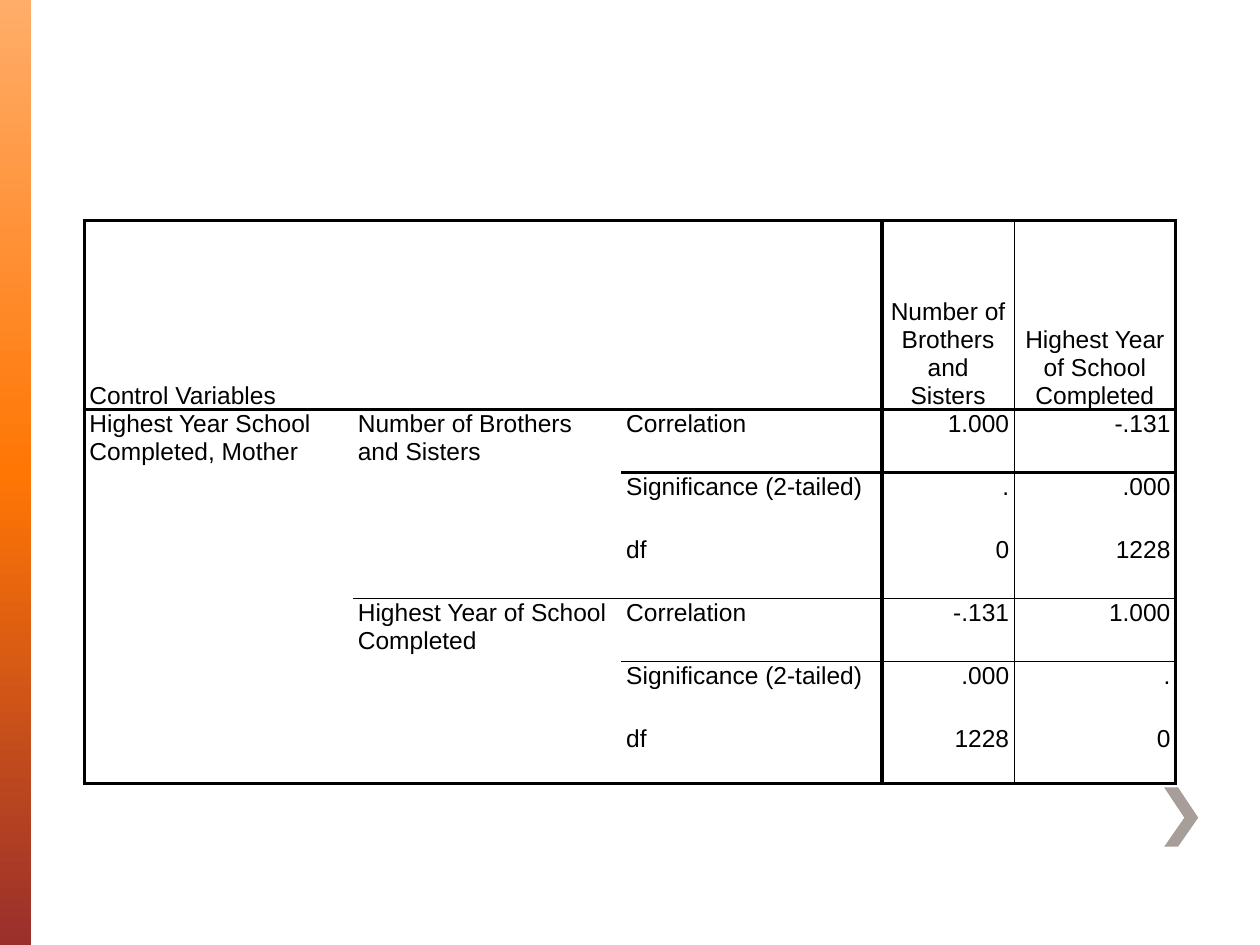
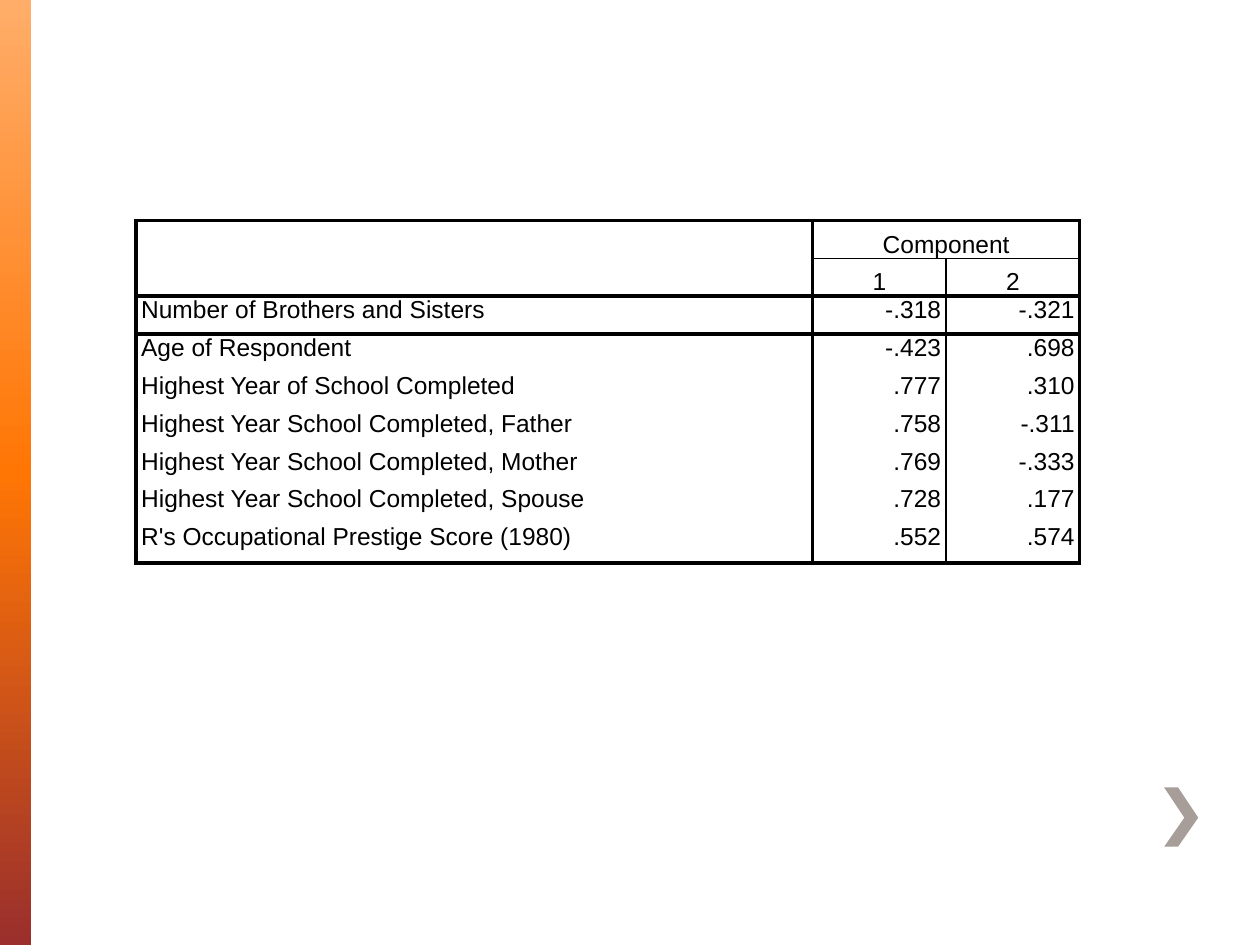
from dataclasses import dataclass
from copy import deepcopy
from typing import NamedTuple

from lxml import etree
from pptx import Presentation
from pptx import util as u
from pptx.dml.color import RGBColor
from pptx.enum import shapes, text
from pptx.oxml.ns import qn


@dataclass(frozen=True)
class Theme:
    font: str = "Arial"
    size: int = 14
    line_spacing: int = 16
    ink: str = "000000"
    paper: str = "FFFFFF"
    chevron: str = "A79D99"
    band: tuple = ((0, "FFAD69"), (0.5, "FF7605"), (1, "9A2F2C"))
    thick: float = 2.25
    thin: float = 1
    no_table_style: str = "{2D5ABB26-0587-4C30-8999-92F81FD0307C}"


THEME = Theme()
INDENT = u.Inches(0.04)
CHEVRON = [(9.35, 6.25), (9.24, 6.25), (9.4, 6.49), (9.24, 6.72), (9.35, 6.72), (9.51, 6.49)]


class Span(NamedTuple):
    """Cells merged into one, from the first to the last row and column."""
    top: int
    left: int
    bottom: int
    right: int


class Rule(NamedTuple):
    """A line along a grid boundary, covering cells start to stop - 1."""
    horizontal: bool
    boundary: int
    start: int
    stop: int
    width: float


@dataclass(frozen=True)
class StatTable:
    left: float
    top: float
    widths: list[float]
    heights: list[float]
    rows: list[tuple[str, ...]]
    label_columns: int
    header_end: int
    body_end: int
    spans: list[Span]
    inner_rules: list[Rule]

    def rules(self) -> list[Rule]:
        """Frame, header line and label divider, then the table's own lines."""
        columns, end, thick = len(self.widths), self.body_end, THEME.thick
        across = [Rule(True, row, 0, columns, thick) for row in (1, self.header_end, end)]
        down = [Rule(False, column, 1, end, thick) for column in (0, self.label_columns, columns)]
        return across + down + self.inner_rules


CORRELATIONS = StatTable(
    left=0.67, top=0.75,
    widths=[2.13, 2.13, 2.07, 1.05, 1.28],
    heights=[1, 1.5] + [0.5] * 5 + [0.47],
    rows=[
        (),
        ("Control Variables", "", "", "Number of Brothers and Sisters",
         "Highest Year of School Completed"),
        ("Highest Year School Completed, Mother", "Number of Brothers and Sisters",
         "Correlation", "1.000", "-.131"),
        ("", "", "Significance (2-tailed)", ".", ".000"),
        ("", "", "df", "0", "1228"),
        ("", "Highest Year of School Completed", "Correlation", "-.131", "1.000"),
        ("", "", "Significance (2-tailed)", ".000", "."),
        ("", "", "df", "1228", "0"),
    ],
    label_columns=3, header_end=2, body_end=8,
    spans=[Span(0, 0, 0, 4), Span(1, 0, 1, 2), Span(2, 0, 7, 0),
           Span(2, 1, 4, 1), Span(5, 1, 7, 1)],
    inner_rules=[Rule(False, 4, 1, 8, THEME.thin), Rule(True, 5, 1, 5, THEME.thin)],
)

COMPONENTS = StatTable(
    left=1.08, top=1.5,
    widths=[5.37, 1.06, 1.06],
    heights=[0.25] + [0.3] * 8 + [0.32, 1.97],
    rows=[
        (),
        ("", "Component"),
        ("", "1", "2"),
        ("Number of Brothers and Sisters", "-.318", "-.321"),
        ("Age of Respondent", "-.423", ".698"),
        ("Highest Year of School Completed", ".777", ".310"),
        ("Highest Year School Completed, Father", ".758", "-.311"),
        ("Highest Year School Completed, Mother", ".769", "-.333"),
        ("Highest Year School Completed, Spouse", ".728", ".177"),
        ("R's Occupational Prestige Score (1980)", ".552", ".574"),
        (),
    ],
    label_columns=1, header_end=3, body_end=10,
    spans=[Span(0, 0, 0, 2), Span(1, 0, 2, 0), Span(1, 1, 1, 2), Span(10, 0, 10, 2)],
    inner_rules=[Rule(False, 2, 2, 10, THEME.thin), Rule(True, 2, 1, 2, THEME.thin)],
)


def write_text(cell, words: str, *, align, anchor) -> None:
    cell.margin_left = cell.margin_right = cell.margin_top = cell.margin_bottom = 0
    cell.vertical_anchor = anchor
    para = cell.text_frame.paragraphs[0]
    para.alignment = align
    para.line_spacing = u.Pt(THEME.line_spacing)
    for side in ("marL", "marR"):
        para._p.get_or_add_pPr().set(side, str(INDENT))
    if not words:
        etree.SubElement(para._p, qn("a:endParaRPr"), sz=str(THEME.size * 100))
        return
    span = para.add_run()
    span.text = words
    span.font.name = THEME.font
    span.font.size = u.Pt(THEME.size)
    span.font.color.rgb = RGBColor.from_string(THEME.ink)


def collect_borders(data: StatTable) -> dict:
    """Map (row, column) to its border widths; a merged cell's first cell gets them too."""
    origins = {(row, column): (span.top, span.left)
               for span in data.spans
               for row in range(span.top, span.bottom + 1)
               for column in range(span.left, span.right + 1)}
    borders: dict = {}
    for rule in data.rules():
        sides = ((rule.boundary - 1, "B" if rule.horizontal else "R"),
                 (rule.boundary, "T" if rule.horizontal else "L"))
        for along in range(rule.start, rule.stop):
            for across, side in sides:
                place = (across, along) if rule.horizontal else (along, across)
                for target in (place, origins.get(place, place)):
                    borders.setdefault(target, {})[side] = rule.width
    return borders


def draw_borders(cell, widths: dict[str, float]) -> None:
    properties = cell._tc.get_or_add_tcPr()
    for side in "LRTB":
        if side in widths:
            line = etree.SubElement(properties, qn(f"a:ln{side}"), w=str(u.Pt(widths[side])))
            fill = etree.SubElement(line, qn("a:solidFill"))
            etree.SubElement(fill, qn("a:srgbClr"), val=THEME.ink)


def draw_table(page, data: StatTable) -> None:
    frame = page.shapes.add_table(
        len(data.heights), len(data.widths), u.Inches(data.left), u.Inches(data.top),
        u.Inches(sum(data.widths)), u.Inches(sum(data.heights)))
    table = frame.table
    table.first_row = table.horz_banding = False
    table._tbl.tblPr.find(qn("a:tableStyleId")).text = THEME.no_table_style
    for column, width in zip(table.columns, data.widths):
        column.width = u.Inches(width)
    for row, height in zip(table.rows, data.heights):
        row.height = u.Inches(height)

    borders = collect_borders(data)
    for r, words in enumerate(data.rows):
        header = r < data.header_end
        for c in range(len(data.widths)):
            cell = table.cell(r, c)
            if c < data.label_columns:
                align = text.PP_ALIGN.LEFT
            else:
                align = text.PP_ALIGN.CENTER if header else text.PP_ALIGN.RIGHT
            anchor = text.MSO_ANCHOR.BOTTOM if header else text.MSO_ANCHOR.TOP
            write_text(cell, words[c] if c < len(words) else "", align=align, anchor=anchor)
            draw_borders(cell, borders.get((r, c), {}))
            cell.fill.solid()
            cell.fill.fore_color.rgb = RGBColor.from_string(THEME.paper)
    for span in data.spans:
        table.cell(span.top, span.left).merge(table.cell(span.bottom, span.right))


def draw_band(page, height: int) -> None:
    band = page.shapes.add_shape(
        shapes.MSO_SHAPE.RECTANGLE, 0, 0, u.Inches(0.25), height)
    band.shadow.inherit = False
    band.line.fill.background()
    band.fill.gradient()
    band.fill.gradient_angle = 270
    stop_list = band._element.spPr.find(qn("a:gradFill")).find(qn("a:gsLst"))
    stop_list.append(deepcopy(stop_list[-1]))
    for stop, (position, color) in zip(band.fill.gradient_stops, THEME.band):
        stop.position = position
        stop.color.rgb = RGBColor.from_string(color)


def draw_chevron(page) -> None:
    points = [(u.Inches(x), u.Inches(y)) for x, y in CHEVRON]
    builder = page.shapes.build_freeform(*points[0])
    builder.add_line_segments(points[1:], close=True)
    chevron = builder.convert_to_shape()
    chevron.shadow.inherit = False
    chevron.line.fill.background()
    chevron.fill.solid()
    chevron.fill.fore_color.rgb = RGBColor.from_string(THEME.chevron)


def main() -> None:
    deck = Presentation()
    deck.slide_width, deck.slide_height = u.Inches(10), u.Inches(7.5)
    for data in (CORRELATIONS, COMPONENTS):
        page = deck.slides.add_slide(deck.slide_layouts[6])
        draw_band(page, deck.slide_height)
        draw_chevron(page)
        draw_table(page, data)
    deck.save("out.pptx")


if __name__ == "__main__":
    main()
